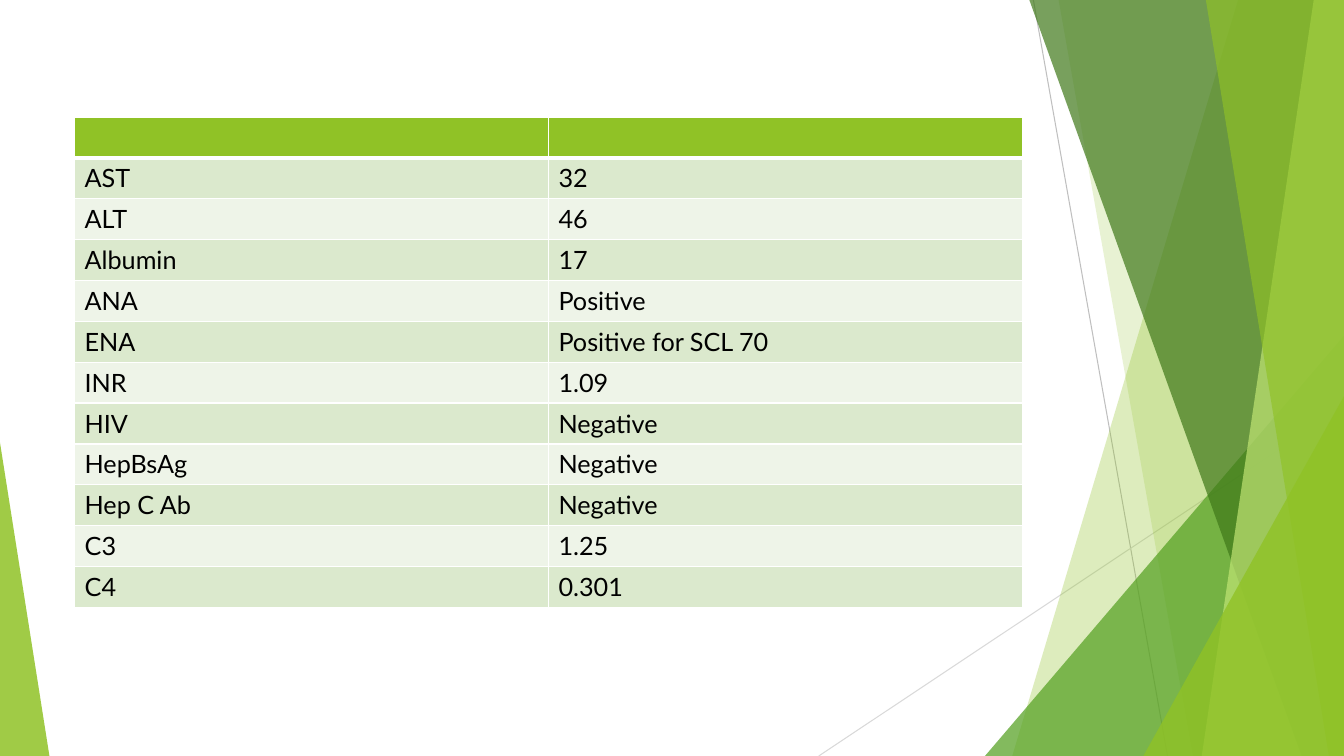
"""Build a slide with a table of blood results beside green angled bands."""
import lxml.etree
import pptx
import pptx.dml.color
import pptx.enum.shapes
import pptx.oxml.ns
import pptx.util

RGB = pptx.dml.color.RGBColor
LIME = RGB(0x90, 0xC2, 0x26)
PALE = RGB(0xC0, 0xE4, 0x74)
LEAF = RGB(0x54, 0xA0, 0x21)
MOSS = RGB(0x3F, 0x78, 0x19)
GREY = RGB(0xBF, 0xBF, 0xBF)
MIST = RGB(0xD9, 0xD9, 0xD9)
TINT = RGB(0xDB, 0xE9, 0xCD)
FAINT = RGB(0xEE, 0xF4, 0xE8)
WHITE = RGB(0xFF, 0xFF, 0xFF)
BLACK = RGB(0, 0, 0)

ROWS = [
    ("", ""),
    ("AST", "32"),
    ("ALT", "46"),
    ("Albumin", "17"),
    ("ANA", "Positive"),
    ("ENA", "Positive for SCL 70"),
    ("INR", "1.09"),
    ("HIV", "Negative"),
    ("HepBsAg", "Negative"),
    ("Hep C Ab", "Negative"),
    ("C3", "1.25"),
    ("C4", "0.301"),
]
GRID = (5.55, 15.47, 70.52, 64.93)
LINES = [
    ((76.89, 0), (86.87, 100), GREY),
    ((100, 53.73), (60.92, 100), MIST),
]
SHAPES = [
    ("band", 92.12, 75.32, LIME, 30),
    ("band", 78.77, 88.75, LIME, 20),
    ("wedge", (73.29, 44.4, 26.71), 1, LEAF, 72),
    ("band", 76.59, 96.85, MOSS, 70),
    ("band", 97.75, 89.42, PALE, 70),
    ("band", 89.72, 98.87, LIME, 65),
    ("wedge", (85.07, 52.4, 14.93), 1, LIME, 80),
    ("wedge", (0, 58.53, 3.68), 0, LIME, 85),
]

deck = pptx.Presentation()
deck.slide_width = pptx.util.Inches(13.33)
deck.slide_height = pptx.util.Inches(7.5)
slide = deck.slides.add_slide(deck.slide_layouts[6])
shapes = slide.shapes


def wide(share):
    return round(deck.slide_width * share / 100)


def high(share):
    return round(deck.slide_height * share / 100)


def add(parent, tag, **attrs):
    return lxml.etree.SubElement(parent, pptx.oxml.ns.qn(tag), **attrs)


def draw_line(start, end, color):
    line = shapes.add_connector(
        pptx.enum.shapes.MSO_CONNECTOR.STRAIGHT,
        wide(start[0]), high(start[1]), wide(end[0]), high(end[1]))
    line.line.color.rgb = color
    line.line.width = pptx.util.Pt(0.75)
    add(line._element.spPr, "a:effectLst")


def draw_band(top, base):
    pen = shapes.build_freeform(wide(top), 0)
    pen.add_line_segments([
        (wide(100), 0), (wide(100), high(100)), (wide(base), high(100))])
    return pen.convert_to_shape()


def draw_wedge(box, peak):
    left, top, width = box
    wedge = shapes.add_shape(
        pptx.enum.shapes.MSO_SHAPE.ISOSCELES_TRIANGLE,
        wide(left), high(top), wide(width), high(100 - top))
    wedge.adjustments[0] = peak
    return wedge


def paint(shape, color, alpha):
    shape.shadow.inherit = False
    shape.line.fill.background()
    shape.fill.solid()
    shape.fill.fore_color.rgb = color
    tone = shape._element.spPr.find(".//" + pptx.oxml.ns.qn("a:srgbClr"))
    add(tone, "a:alpha", val=str(alpha * 1000))


def edge(cell, row):
    props = cell._tc.get_or_add_tcPr()
    for spot, side in enumerate("LRTB"):
        thick = (row, side) in ((0, "B"), (1, "T"))
        line = add(props, "a:ln" + side,
                   w=str(pptx.util.Pt(3 if thick else 1)))
        fill = add(line, "a:solidFill")
        add(fill, "a:srgbClr", val=str(WHITE))
        props.insert(spot, line)


def fill_table():
    left, top, width, height = GRID
    table = shapes.add_table(
        len(ROWS), len(ROWS[0]),
        wide(left), high(top), wide(width), high(height)).table
    for r, row in enumerate(ROWS):
        for c, text in enumerate(row):
            cell = table.cell(r, c)
            cell.text = text
            cell.fill.solid()
            cell.fill.fore_color.rgb = (
                LIME if r == 0 else TINT if r % 2 else FAINT)
            font = cell.text_frame.paragraphs[0].font
            font.name = "Lato"
            font.size = pptx.util.Pt(18)
            font.color.rgb = BLACK
            edge(cell, r)


def main():
    for item in LINES:
        draw_line(*item)
    makers = {"band": draw_band, "wedge": draw_wedge}
    for kind, first, second, color, alpha in SHAPES:
        paint(makers[kind](first, second), color, alpha)
    fill_table()
    deck.save("out.pptx")


if __name__ == "__main__":
    main()
